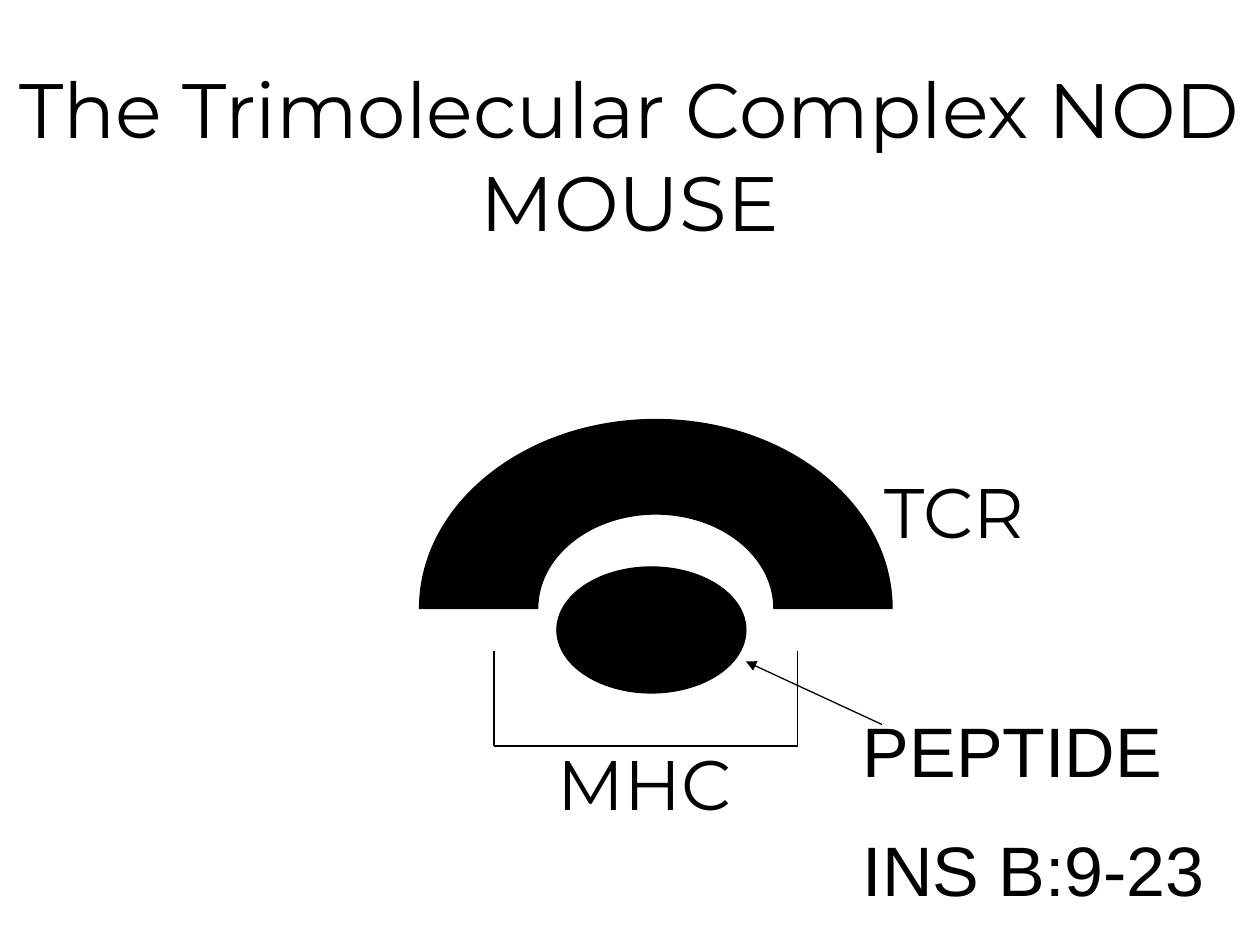
from lxml import etree
from pptx import Presentation
from pptx.dml.color import RGBColor
from pptx.enum import shapes, text
from pptx.oxml.ns import qn
from pptx.util import Inches, Pt

BLACK = "000000"
KAPPA = 0.5523  # control length of a Bezier quarter circle


def color(hex_string):
    return RGBColor.from_string(hex_string)


def style_shape(sp):
    sp.shadow.inherit = False
    sp.fill.solid()
    sp.fill.fore_color.rgb = color(BLACK)
    sp.line.color.rgb = color(BLACK)
    sp.line.width = Pt(0.75)


def add_run(p, words, font, size):
    r = p.add_run()
    r.text = words
    r.font.name = font
    r.font.size = Pt(size)
    r.font.color.rgb = color(BLACK)


def add_title(s, x, y, w, h, words):
    sp = s.shapes.title
    sp.left, sp.top, sp.width, sp.height = map(Inches, (x, y, w, h))
    tf = sp.text_frame
    tf.word_wrap = True
    tf.vertical_anchor = text.MSO_ANCHOR.MIDDLE
    p = tf.paragraphs[0]
    p.alignment = text.PP_ALIGN.CENTER
    add_run(p, words, "Montserrat", 44)


def add_label(s, x, y, w, h, lines, font="Montserrat"):
    tf = s.shapes.add_textbox(*map(Inches, (x, y, w, h))).text_frame
    tf.word_wrap = True
    for i, words in enumerate(lines):
        p = tf.add_paragraph() if i else tf.paragraphs[0]
        if i:
            p.space_before = Pt(20)
        add_run(p, words, font, 40)


def add_line(s, start, end, arrow=False):
    line = s.shapes.add_connector(
        shapes.MSO_CONNECTOR.STRAIGHT, *map(Inches, (*start, *end)))
    line.line.color.rgb = color(BLACK)
    line.line.width = Pt(0.75)
    sp_pr = line._element.spPr
    if arrow:
        etree.SubElement(sp_pr.find(qn("a:ln")), qn("a:tailEnd"), type="triangle")
    etree.SubElement(sp_pr, qn("a:effectLst"))


def add_receptor(s, x, y, w, h):
    """Upper half of an elliptical ring, the hole half as wide and high."""
    def arc(scale, side):
        cx, cy = x + w / 2, y + h / 2
        rx, ry = side * scale * w / 2, scale * h / 2
        unit = [(-1, 0), (-1, KAPPA), (-KAPPA, 1), (0, 1),
                (KAPPA, 1), (1, KAPPA), (1, 0)]
        return [(Inches(cx + u * rx), Inches(cy - v * ry)) for u, v in unit]

    inner, outer = arc(0.5, 1), arc(1, -1)
    builder = s.shapes.build_freeform(*inner[0])
    builder.add_line_segments(inner[1:] + outer, close=True)
    sp = builder.convert_to_shape()
    style_shape(sp)

    # Turn each three points of an arc into one curve
    path = next(sp._element.iter(qn("a:path")))
    segments = path.findall(qn("a:lnTo"))
    for first in (0, 3, 7, 10):
        curve = etree.Element(qn("a:cubicBezTo"))
        segments[first].addprevious(curve)
        for segment in segments[first:first + 3]:
            curve.append(segment[0])
            path.remove(segment)

    # The frame spans the whole ring
    path.set("h", str(2 * int(path.get("h"))))
    sp.height = Inches(h)


def add_peptide(s, x, y, w, h):
    style_shape(s.shapes.add_shape(
        shapes.MSO_SHAPE.OVAL, *map(Inches, (x, y, w, h))))


def add_mhc_groove(s, x, y, w, h):
    left, right, bottom = x, x + w, y + h
    add_line(s, (left, bottom), (right, bottom))
    for side in (right, left):
        add_line(s, (side, bottom), (side, y))


def main():
    prs = Presentation()
    prs.slide_width, prs.slide_height = Inches(10), Inches(7.5)
    s = prs.slides.add_slide(prs.slide_layouts[5])

    add_title(s, 0, 0.42, 10, 1.61, "The Trimolecular Complex NOD MOUSE")

    # The three molecules
    add_receptor(s, 3.33, 3.33, 3.75, 3)
    add_peptide(s, 4.42, 4.5, 1.5, 1)
    add_mhc_groove(s, 3.92, 5.17, 2.41, 0.75)

    # Labels and pointer
    add_label(s, 4.33, 5.83, 1.75, 0.77, ["MHC"])
    add_line(s, (7, 5.75), (5.92, 5.25), arrow=True)
    add_label(s, 6.75, 5.57, 3.08, 1.77, ["PEPTIDE", "INS B:9-23"], "Arial")
    add_label(s, 6.92, 3.67, 1.92, 0.77, ["TCR"])

    prs.save("out.pptx")


if __name__ == "__main__":
    main()
